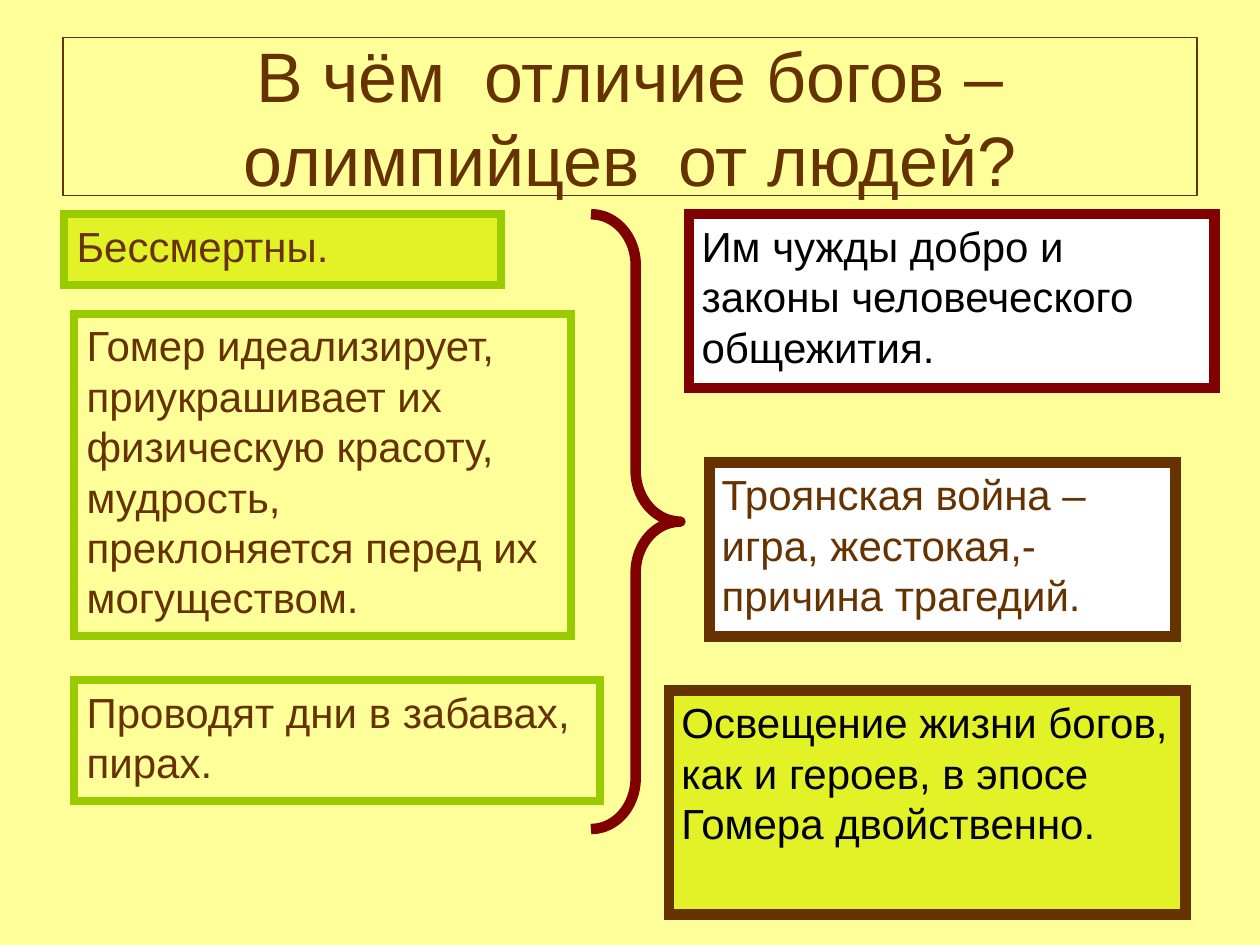
from dataclasses import dataclass

from lxml.etree import SubElement
from pptx import Presentation
from pptx.dml.color import RGBColor as RGB
from pptx.enum.shapes import MSO_SHAPE as SHAPE
from pptx.enum.text import MSO_ANCHOR as ANCHOR, MSO_AUTO_SIZE as AUTO, PP_ALIGN as ALIGN
from pptx.oxml.ns import qn
from pptx.util import Inches, Pt


@dataclass(frozen=True)
class Theme:
    font: str = "Arial"
    paper: str = "FFFF99"
    brown: str = "663300"
    green: str = "99CC00"
    lime: str = "E3F226"
    maroon: str = "800000"
    white: str = "FFFFFF"
    black: str = "000000"
    title_size: float = 40
    body_size: float = 24
    hairline: float = 0.75
    medium: float = 4.5
    heavy: float = 6


class Deck:
    """Builds slides on a grid of 100 columns by 75 rows."""

    def __init__(self, theme):
        self.theme = theme
        self.prs = Presentation()
        self.prs.slide_width, self.prs.slide_height = Inches(10), Inches(7.5)
        self.col = self.prs.slide_width / 100
        self.row = self.prs.slide_height / 75

    def cells(self, x, y, w, h):
        return [round(n * unit) for n, unit in zip((x, y, w, h), (self.col, self.row) * 2)]

    def slide(self):
        self.s = self.prs.slides.add_slide(self.prs.slide_layouts[5])
        fill = self.s.background.fill
        fill.solid()
        fill.fore_color.rgb = RGB.from_string(self.theme.paper)

    def outline(self, sp, color, width):
        sp.line.color.rgb = RGB.from_string(color)
        sp.line.width = Pt(width)

    def label(self, sp, text, size, color, align, anchor):
        tf = sp.text_frame
        tf.text = text
        tf.word_wrap = True
        tf.auto_size = AUTO.NONE
        tf.vertical_anchor = anchor
        p = tf.paragraphs[0]
        p.alignment = align
        font = p.runs[0].font
        font.name, font.size = self.theme.font, Pt(size)
        font.color.rgb = RGB.from_string(color)

    def title(self, text, area):
        t, sp = self.theme, self.s.shapes.title
        sp.left, sp.top, sp.width, sp.height = self.cells(*area)
        self.outline(sp, t.brown, t.hairline)
        self.label(sp, text, t.title_size, t.brown, ALIGN.CENTER, ANCHOR.MIDDLE)

    def shape(self, kind, area, line, width, fill=None):
        sp = self.s.shapes.add_shape(kind, *self.cells(*area))
        sp.shadow.inherit = False
        if fill:
            sp.fill.solid()
            sp.fill.fore_color.rgb = RGB.from_string(fill)
        else:
            sp.fill.background()
        self.outline(sp, line, width)
        return sp

    def box(self, text, area, line, width, color, fill=None):
        sp = self.shape(SHAPE.RECTANGLE, area, line, width, fill)
        SubElement(sp.element.spPr.find(qn("a:ln")), qn("a:miter"), lim="800000")
        self.label(sp, text, self.theme.body_size, color, ALIGN.LEFT, ANCHOR.TOP)

    def brace(self, area, curl):
        sp = self.shape(SHAPE.RIGHT_BRACE, area, self.theme.maroon, self.theme.heavy)
        sp.adjustments[0], sp.adjustments[1] = curl, 0.5


def main():
    t = Theme()
    deck = Deck(t)
    deck.slide()
    deck.title("В чём  отличие богов – олимпийцев  от людей?", (5, 3, 90, 12.5))

    traits = [
        ("Бессмертны.", (5.1, 17, 34.7, 5.6), t.lime),
        ("Гомер идеализирует, приукрашивает их физическую красоту, мудрость, "
         "преклоняется перед их могуществом.", (5.9, 24.9, 39.4, 25.6), None),
        ("Проводят дни в забавах, пирах.", (5.9, 54, 41.7, 9.6), None),
    ]
    for text, area, fill in traits:
        deck.box(text, area, t.green, t.medium, t.brown, fill)

    deck.brace((46.9, 17, 7.1, 48.8), 0.57)

    conclusions = [
        ("Им чужды добро и законы человеческого общежития.",
         (54.7, 17, 41.7, 13.8), t.maroon, t.black, t.white),
        ("Троянская война – игра, жестокая,- причина трагедий.",
         (56.3, 36.7, 37, 13.8), t.brown, t.brown, t.white),
        ("Освещение жизни богов, как и героев, в эпосе Гомера двойственно.",
         (53.1, 54.8, 41, 17.8), t.brown, t.black, t.lime),
    ]
    for text, area, line, color, fill in conclusions:
        deck.box(text, area, line, t.heavy, color, fill)

    deck.prs.save("out.pptx")


if __name__ == "__main__":
    main()
